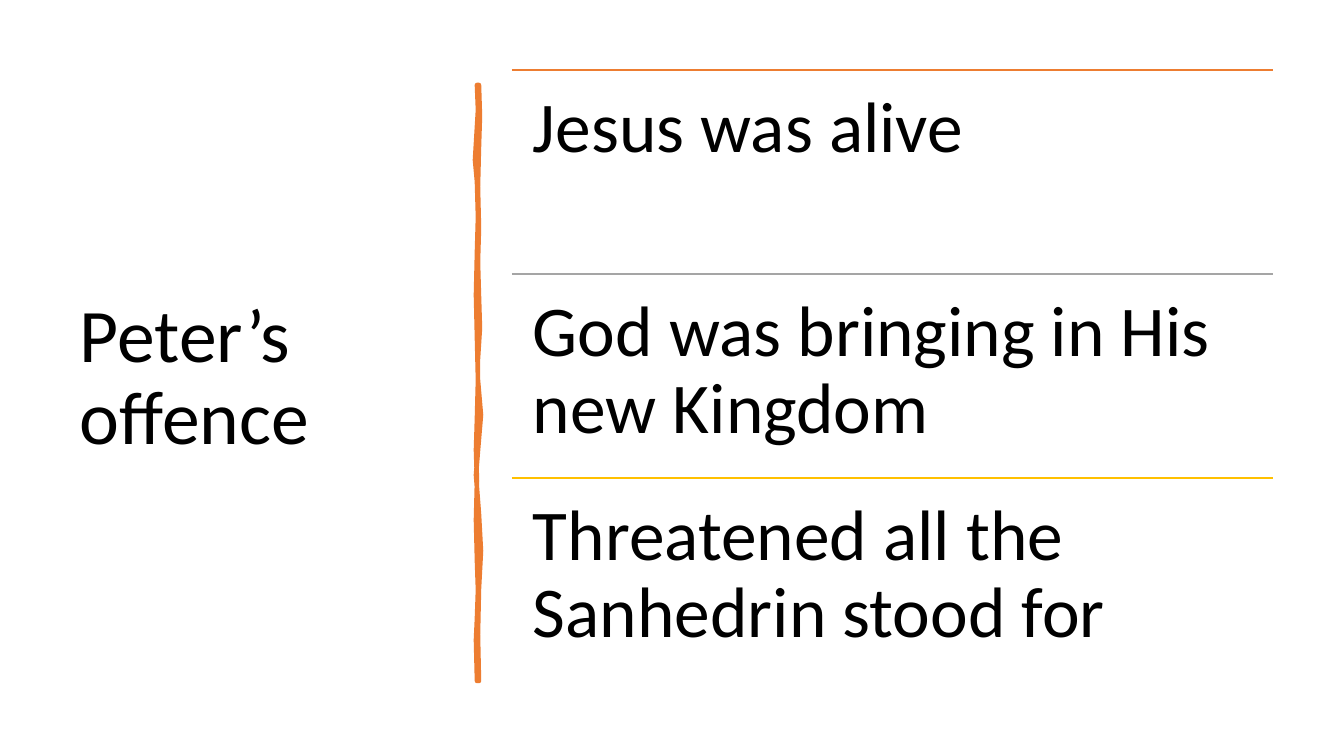
import pptx
import pptx.dml.color
import pptx.enum.shapes
import pptx.enum.text
import pptx.util
from lxml import etree

EMU_PER_PX = 914400 / 100.8
FONT = "Calibri"
COLOURS = {
    "text": "000000",
    "orange": "ED7D31",
    "grey": "A5A5A5",
    "gold": "FFC000",
}

LIST_LEFT, LIST_TOP, LIST_WIDTH, ROW_HEIGHT = 512, 70, 761, 204
REASONS = [
    ("Jesus was alive", "orange"),
    ("God was bringing in His new Kingdom", "grey"),
    ("Threatened all the Sanhedrin stood for", "gold"),
]

# Down the right edge of the hand-drawn divider, then back up the left edge.
DIVIDER_OUTLINE = [
    (479, 85), (480, 116), (479, 147), (478, 187), (479, 228), (478, 262),
    (479, 296), (480, 328), (478, 359), (478, 380), (481, 415), (479, 439),
    (476, 475), (479, 514), (481, 551), (479, 589), (478, 635), (479, 681),
    (477, 681), (476, 640), (477, 618), (478, 590), (477, 561), (476, 520),
    (477, 481), (476, 450), (477, 418), (478, 380), (477, 338), (476, 295),
    (477, 252), (478, 217), (477, 182), (475, 160), (478, 110), (477, 85),
]


def px(length):
    return pptx.util.Emu(round(length * EMU_PER_PX))


def colour(name):
    return pptx.dml.color.RGBColor.from_string(COLOURS[name])


def add_text(slide, text, box, size, insets, anchor):
    """Add a wrapped text box; insets are horizontal and vertical px."""
    shape = slide.shapes.add_textbox(*map(px, box))
    frame = shape.text_frame
    frame.word_wrap = True
    frame.vertical_anchor = anchor
    frame.margin_left = frame.margin_right = px(insets[0])
    frame.margin_top = frame.margin_bottom = px(insets[1])
    frame.text = text
    paragraph = frame.paragraphs[0]
    paragraph.line_spacing = 0.9
    font = paragraph.runs[0].font
    font.name = FONT
    font.size = pptx.util.Pt(size)
    font.color.rgb = colour("text")


def add_rule(slide, top, colour_name):
    rule = slide.shapes.add_connector(
        pptx.enum.shapes.MSO_CONNECTOR.STRAIGHT,
        px(LIST_LEFT), px(top), px(LIST_LEFT + LIST_WIDTH), px(top))
    rule.line.color.rgb = colour(colour_name)
    rule.line.width = pptx.util.Pt(1)
    properties = rule.element.spPr
    etree.SubElement(properties, pptx.oxml.ns.qn("a:effectLst"))


def add_divider(slide):
    builder = slide.shapes.build_freeform(*DIVIDER_OUTLINE[0], scale=EMU_PER_PX)
    builder.add_line_segments(DIVIDER_OUTLINE[1:], close=True)
    divider = builder.convert_to_shape()
    divider.shadow.inherit = False
    divider.fill.solid()
    divider.fill.fore_color.rgb = colour("orange")
    divider.line.color.rgb = colour("orange")
    divider.line.width = pptx.util.Pt(3.25)


def main():
    presentation = pptx.Presentation()
    presentation.slide_width = px(1344)
    presentation.slide_height = px(756)
    slide = presentation.slides.add_slide(presentation.slide_layouts[6])

    anchors = pptx.enum.text.MSO_ANCHOR
    add_text(slide, "Peter’s offence", (70, 71, 377, 616), 54, (10, 5),
             anchors.MIDDLE)
    add_divider(slide)
    for row, (reason, rule_colour) in enumerate(REASONS):
        top = LIST_TOP + row * ROW_HEIGHT
        add_rule(slide, top, rule_colour)
        add_text(slide, reason, (LIST_LEFT, top, LIST_WIDTH, ROW_HEIGHT), 51,
                 (21, 21), anchors.TOP)

    presentation.save("out.pptx")


if __name__ == "__main__":
    main()
